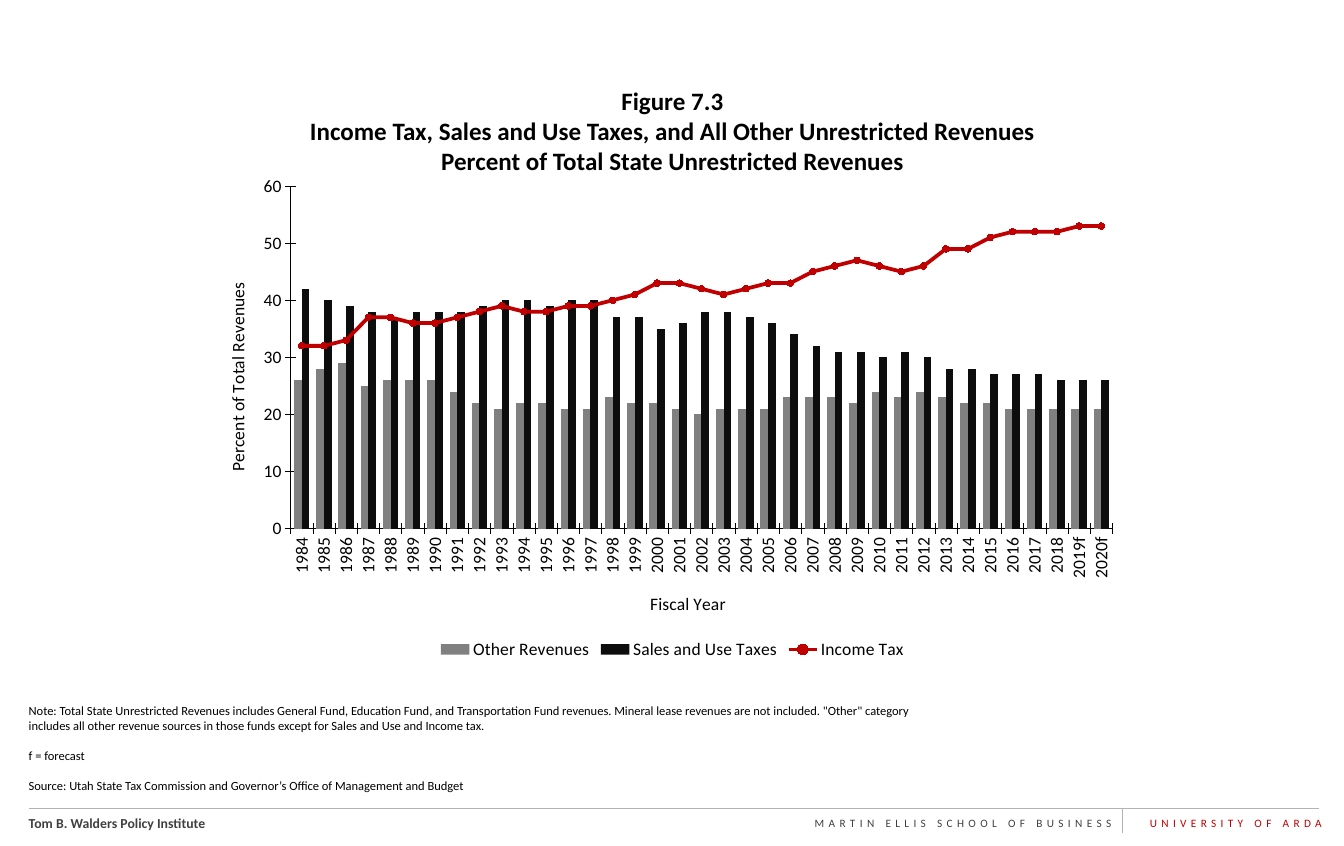
from dataclasses import dataclass

from lxml import etree
from pptx import Presentation
from pptx import util as u
from pptx.chart.data import CategoryChartData
from pptx.dml.color import RGBColor
from pptx.enum import chart as ch, shapes, text
from pptx.oxml import parse_xml
from pptx.oxml.ns import nsdecls, qn


@dataclass(frozen=True)
class Theme:
    font: str = "Calibri"
    black: str = "000000"
    dark: str = "404040"
    red: str = "C00000"
    rule: str = "B3B3B3"
    other: str = "808080"
    sales: str = "0D0D0D"
    title: int = 20
    chart: int = 14
    footer: int = 11
    note: int = 10
    small: int = 9


theme = Theme()


def add_run(p, words, size, color, bold=False):
    r = p.add_run()
    r.text = words
    r.font.name = theme.font
    r.font.size = u.Pt(size)
    r.font.bold = bold
    r.font.color.rgb = RGBColor.from_string(color)
    return r


def add_text_box(left, top, width, height):
    tf = s.shapes.add_textbox(u.Cm(left), u.Cm(top), u.Cm(width), u.Cm(height)).text_frame
    tf.word_wrap = True
    return tf


prs = Presentation()
prs.slide_width, prs.slide_height = u.Cm(37.92), u.Cm(23.88)
s = prs.slides.add_slide(prs.slide_layouts[5])

title = s.shapes.title
title.left, title.top, title.width, title.height = u.Cm(6.27), u.Cm(2.41), u.Cm(25.4), u.Cm(2.54)
tf = title.text_frame
tf.auto_size = text.MSO_AUTO_SIZE.NONE
tf.word_wrap = True
tf.vertical_anchor = text.MSO_ANCHOR.MIDDLE
p = tf.paragraphs[0]
p.alignment = text.PP_ALIGN.CENTER
add_run(p, "Figure 7.3", theme.title, theme.black, True)
p = tf.add_paragraph()
p.alignment = text.PP_ALIGN.CENTER
add_run(p, "Income Tax, Sales and Use Taxes, and All Other Unrestricted Revenues", theme.title, theme.black, True)
p.add_line_break()
add_run(p, "Percent of Total State Unrestricted Revenues", theme.title, theme.black, True)

data = CategoryChartData(number_format="0")
data.categories = [str(year) for year in range(1984, 2019)] + ["2019f", "2020f"]
data.add_series("Other Revenues", [
    26, 28, 29, 25, 26, 26, 26, 24, 22, 21, 22, 22, 21, 21, 23, 22, 22, 21, 20,
    21, 21, 21, 23, 23, 23, 22, 24, 23, 24, 23, 22, 22, 21, 21, 21, 21, 21])
data.add_series("Sales and Use Taxes", [
    42, 40, 39, 38, 37, 38, 38, 38, 39, 40, 40, 39, 40, 40, 37, 37, 35, 36, 38,
    38, 37, 36, 34, 32, 31, 31, 30, 31, 30, 28, 28, 27, 27, 27, 26, 26, 26])
data.add_series("Income Tax", [
    32, 32, 33, 37, 37, 36, 36, 37, 38, 39, 38, 38, 39, 39, 40, 41, 43, 43, 42,
    41, 42, 43, 43, 45, 46, 47, 46, 45, 46, 49, 49, 51, 52, 52, 52, 53, 53])
chart = s.shapes.add_chart(
    ch.XL_CHART_TYPE.COLUMN_CLUSTERED, u.Cm(6.27), u.Cm(4.95), u.Cm(25.4), u.Cm(13.79), data).chart
chart.has_title = False
chart.font.name = theme.font
chart.font.size = u.Pt(theme.chart)
chart.font.color.rgb = RGBColor.from_string(theme.black)
chart.has_legend = True
chart.legend.position = ch.XL_LEGEND_POSITION.BOTTOM
chart.legend.include_in_layout = False

bars = chart.plots[0]
bars.gap_width = 90
bars.overlap = 0
bars.vary_by_categories = False
for series, color in zip(bars.series, (theme.other, theme.sales)):
    series.format.fill.solid()
    series.format.fill.fore_color.rgb = RGBColor.from_string(color)

cat_axis, val_axis = chart.category_axis, chart.value_axis
val_axis.minimum_scale, val_axis.maximum_scale, val_axis.major_unit = 0, 60, 10
val_axis.has_major_gridlines = False
val_axis.tick_labels.number_format = "0"
val_axis.tick_labels.number_format_is_linked = False
for axis, name in ((cat_axis, "Fiscal Year"), (val_axis, "Percent of Total Revenues")):
    axis.major_tick_mark = ch.XL_TICK_MARK.CROSS
    axis.format.line.color.rgb = RGBColor.from_string(theme.black)
    axis.format.line.width = u.Pt(0.25)
    axis.tick_labels.font.size = u.Pt(theme.chart)
    add_run(axis.axis_title.text_frame.paragraphs[0], name, theme.chart, theme.black)

for body in (cat_axis._element.find(qn("c:txPr") + "/" + qn("a:bodyPr")),
             val_axis.axis_title._element.find(".//" + qn("a:bodyPr"))):
    body.set("rot", "-5400000")
    body.set("vert", "horz")

plot_area = chart._chartSpace.find(".//" + qn("c:plotArea"))
bar_chart = plot_area.find(qn("c:barChart"))
income = bar_chart.findall(qn("c:ser"))[2]
for flag in income.findall(qn("c:invertIfNegative")):
    income.remove(flag)
line_chart = parse_xml(
    f'<c:lineChart {nsdecls("c")}><c:grouping val="standard"/><c:varyColors val="0"/>'
    '<c:marker val="1"/></c:lineChart>')
line_chart.insert(2, income)
for axis_id in bar_chart.findall(qn("c:axId")):
    etree.SubElement(line_chart, qn("c:axId")).set("val", axis_id.get("val"))
bar_chart.addnext(line_chart)

line = chart.plots[1].series[0]
line.smooth = False
line.format.line.color.rgb = RGBColor.from_string(theme.red)
line.format.line.width = u.Pt(3)
line.marker.style = ch.XL_MARKER_STYLE.CIRCLE
line.marker.size = 5
line.marker.format.fill.solid()
line.marker.format.fill.fore_color.rgb = RGBColor.from_string(theme.red)
line.marker.format.line.color.rgb = RGBColor.from_string(theme.red)

for layout in plot_area.findall(qn("c:layout")):
    plot_area.remove(layout)
plot_area.insert(0, parse_xml(
    f'<c:layout {nsdecls("c")}><c:manualLayout><c:layoutTarget val="inner"/>'
    '<c:xMode val="edge"/><c:yMode val="edge"/><c:x val="0.076"/><c:y val="0.022"/>'
    '<c:w val="0.913"/><c:h val="0.701"/></c:manualLayout></c:layout>'))

tf = add_text_box(0.56, 19.71, 25.4, 2.06)
notes = (
    "Note: Total State Unrestricted Revenues includes General Fund, Education Fund, and Transportation Fund "
    "revenues. Mineral lease revenues are not included. \"Other\" category includes all other revenue sources "
    "in those funds except for Sales and Use and Income tax.",
    "f = forecast",
    "Source: Utah State Tax Commission and Governor’s Office of Management and Budget",
)
for i, note in enumerate(notes):
    p = tf.add_paragraph() if i else tf.paragraphs[0]
    p.space_before = u.Pt(12 if i else 0)
    add_run(p, note, theme.note, theme.black)

for x1, y1, x2, y2 in ((0.81, 22.81, 37.21, 22.81), (31.67, 22.81, 31.67, 23.5)):
    rule = s.shapes.add_connector(shapes.MSO_CONNECTOR.STRAIGHT, u.Cm(x1), u.Cm(y1), u.Cm(x2), u.Cm(y2))
    rule.line.color.rgb = RGBColor.from_string(theme.rule)
    rule.line.width = u.Pt(0.75)
    etree.SubElement(rule._element.spPr, qn("a:effectLst"))

tf = add_text_box(0.56, 22.86, 12, 0.74)
add_run(tf.paragraphs[0], "Tom B. Walders Policy Institute", theme.footer, theme.dark, True)
for left, width, name, color in (
        (13.13, 18.47, "MARTIN ELLIS SCHOOL OF BUSINESS", theme.dark),
        (31.7, 5.84, "UNIVERSITY OF ARDA", theme.red)):
    p = add_text_box(left, 22.91, width, 0.64).paragraphs[0]
    p.alignment = text.PP_ALIGN.RIGHT
    r = add_run(p, name, theme.small, color)
    r.font._element.set("spc", "350")

prs.save("out.pptx")
